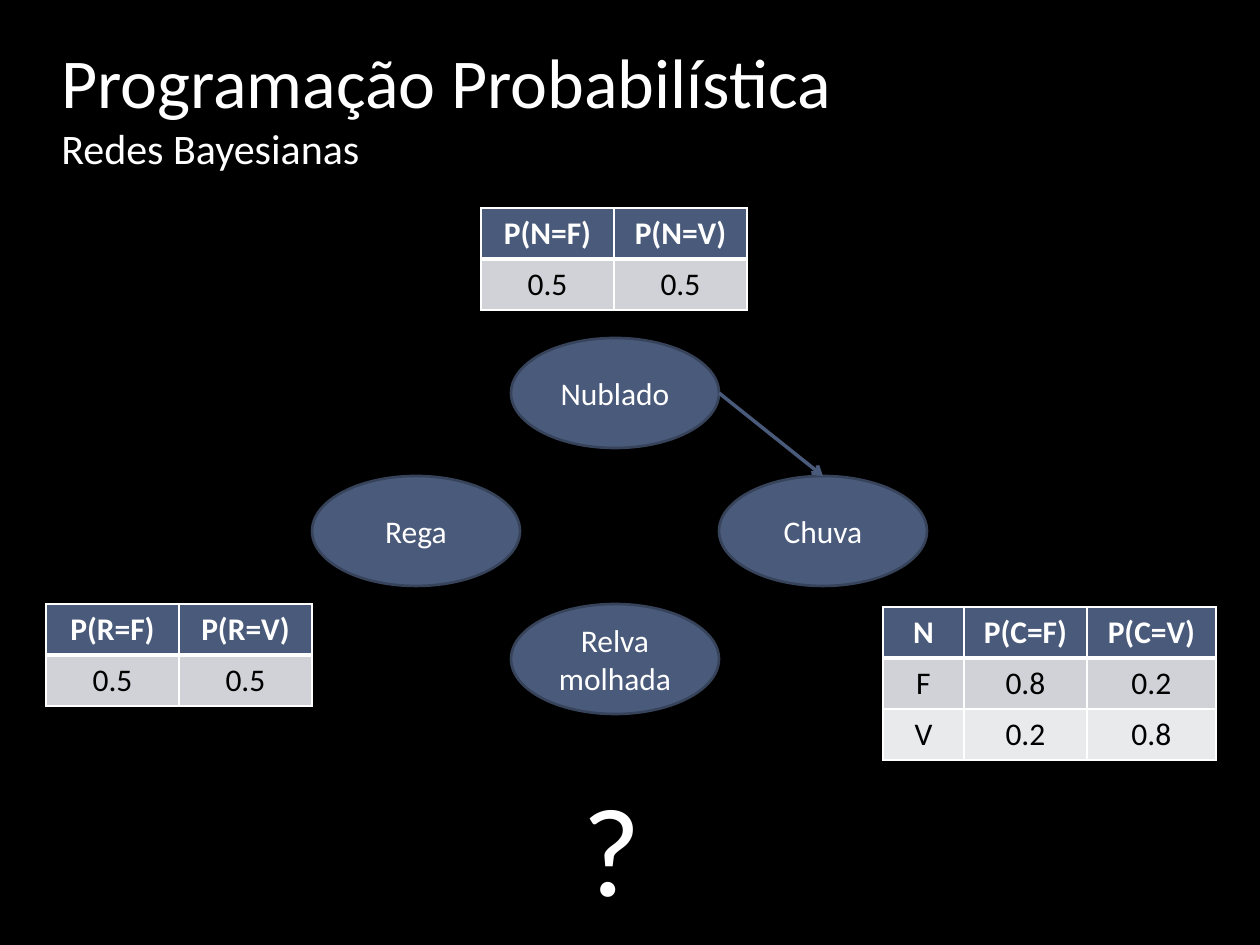
"""Build a slide on Bayesian networks with nodes and probability tables."""
import pptx
import pptx.util
import pptx.dml.color
import pptx.enum.shapes
import pptx.enum.text
import pptx.oxml.ns
from lxml import etree

SIZE = (1260, 945)
FONT = "Calibri"
COLORS = {
    "back": "000000",
    "light": "FFFFFF",
    "dark": "000000",
    "node": "4A5A7A",
    "edge": "37435A",
    "odd": "D0D2D7",
    "even": "E9EAEC",
}
TITLE = [("Programação Probabilística", 40), ("Redes Bayesianas", 24)]
NODE = (208, 110)
NODES = {
    "Nublado": (511, 338),
    "Relva molhada": (511, 604),
    "Chuva": (719, 476),
    "Rega": (312, 476),
}
LINKS = [("Nublado", "Chuva")]
ROW = 51
TABLES = [
    ((481, 208), (133, 133), [("P(N=F)", "P(N=V)"), ("0.5", "0.5")]),
    ((46, 604), (133, 133), [("P(R=F)", "P(R=V)"), ("0.5", "0.5")]),
    ((883, 607), (81, 123, 129),
     [("N", "P(C=F)", "P(C=V)"), ("F", "0.8", "0.2"), ("V", "0.2", "0.8")]),
]
CENTER = pptx.enum.text.PP_ALIGN.CENTER
MIDDLE = pptx.enum.text.MSO_ANCHOR.MIDDLE


def px(n):
    return pptx.util.Emu(round(n * 914400 / 126))


def color(name):
    return pptx.dml.color.RGBColor.from_string(COLORS[name])


def paint(fill, name):
    fill.solid()
    fill.fore_color.rgb = color(name)


def style(run, size, tone="light", bold=False):
    run.font.name = FONT
    run.font.size = pptx.util.Pt(size)
    run.font.bold = bold
    run.font.color.rgb = color(tone)


def add_text(slide, box, parts, wrap=True):
    frame = slide.shapes.add_textbox(*map(px, box)).text_frame
    frame.word_wrap = wrap
    para = frame.paragraphs[0]
    para.text = "\v".join(text for text, size in parts)
    for run, (text, size) in zip(para.runs, parts):
        style(run, size)
    return frame


def add_node(slide, name, spot):
    kind = pptx.enum.shapes.MSO_SHAPE.OVAL
    node = slide.shapes.add_shape(kind, *map(px, spot + NODE))
    node.shadow.inherit = False
    paint(node.fill, "node")
    node.line.color.rgb = color("edge")
    node.line.width = pptx.util.Pt(1.5)
    frame = node.text_frame
    frame.word_wrap = True
    frame.vertical_anchor = MIDDLE
    frame.text = name
    para = frame.paragraphs[0]
    para.alignment = CENTER
    style(para.runs[0], 18)


def add_link(slide, start, end):
    wide, high = NODE
    (x1, y1), (x2, y2) = NODES[start], NODES[end]
    ends = (x1 + wide, y1 + high / 2, x2 + wide / 2, y2)
    kind = pptx.enum.shapes.MSO_CONNECTOR.STRAIGHT
    link = slide.shapes.add_connector(kind, *map(px, ends))
    link.line.color.rgb = color("node")
    link.line.width = pptx.util.Pt(2)
    tag = pptx.oxml.ns.qn
    etree.SubElement(link.line._get_or_add_ln(), tag("a:tailEnd"), type="arrow")
    etree.SubElement(link._element.spPr, tag("a:effectLst"))


def add_border(cell, side, width):
    tag = pptx.oxml.ns.qn
    props = cell._tc.get_or_add_tcPr()
    line = etree.SubElement(props, tag("a:ln" + side), w=str(pptx.util.Pt(width)))
    fill = etree.SubElement(line, tag("a:solidFill"))
    etree.SubElement(fill, tag("a:srgbClr"), val=COLORS["light"])


def fill_cell(cell, text, row):
    cell.text = text
    cell.vertical_anchor = pptx.enum.text.MSO_ANCHOR.TOP
    widths = {"L": 1, "R": 1, "T": 3 if row == 1 else 1, "B": 1 if row else 3}
    for side, width in widths.items():
        add_border(cell, side, width)
    paint(cell.fill, ("even", "odd")[row % 2] if row else "node")
    para = cell.text_frame.paragraphs[0]
    para.alignment = CENTER
    style(para.runs[0], 18, "dark" if row else "light", row == 0)


def add_grid(slide, spot, cols, rows):
    box = spot + (sum(cols), ROW * len(rows))
    grid = slide.shapes.add_table(len(rows), len(cols), *map(px, box)).table
    for col, width in zip(grid.columns, cols):
        col.width = px(width)
    for r, texts in enumerate(rows):
        grid.rows[r].height = px(ROW)
        for c, text in enumerate(texts):
            fill_cell(grid.cell(r, c), text, r)


def main():
    deck = pptx.Presentation()
    deck.slide_width, deck.slide_height = map(px, SIZE)
    slide = deck.slides.add_slide(deck.slide_layouts[6])
    paint(slide.background.fill, "back")
    title = add_text(slide, (49, 32, 1058, 147), TITLE)
    title.vertical_anchor = pptx.enum.text.MSO_ANCHOR.BOTTOM
    title.paragraphs[0].space_before = pptx.util.Pt(4)
    for name, spot in NODES.items():
        add_node(slide, name, spot)
    for table in TABLES:
        add_grid(slide, *table)
    add_text(slide, (570, 764, 79, 165), [("?", 72)], wrap=False)
    for link in LINKS:
        add_link(slide, *link)
    deck.save("out.pptx")


if __name__ == "__main__":
    main()
